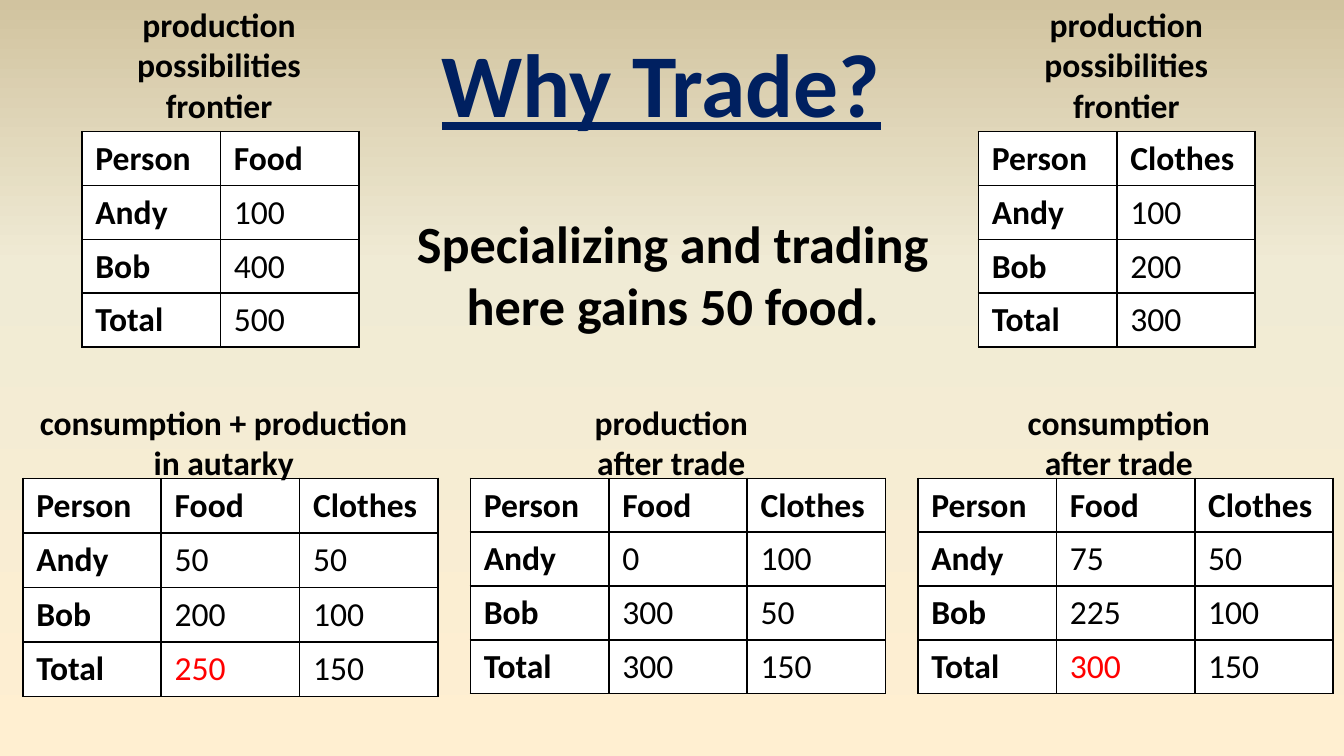
import copy

import pptx
import pptx.dml.color
import pptx.enum.text
import pptx.oxml
import pptx.oxml.ns
import pptx.util

Inches = pptx.util.Inches

HUES = {
    "ink": "000000",
    "navy": "002060",
    "red": "FF0000",
    "white": "FFFFFF",
    "sand": "FFEFD1",
    "cream": "F0EBD5",
    "tan": "D1C39F",
}
STOPS = [(0, "sand"), (0.65, "cream"), (1, "tan")]

BASE = {"name": "Calibri", "size": pptx.util.Pt(18), "bold": True}
PLAIN = {**BASE, "bold": False}
LARGE = {**BASE, "size": pptx.util.Pt(28)}
HEAD = {**BASE, "size": pptx.util.Pt(48), "underline": True}

WIDTH = Inches(10)
CELL = 1.03
ROW = 0.4
STEP = 3.33
NAMES = ["Person", "Andy", "Bob", "Total"]
FRONT = ["production", "possibilities", "frontier"]

TOP = [
    (0.61, 0.67, ["Food", "100", "400", "500"]),
    (7.28, 7.42, ["Clothes", "100", "200", "300"]),
]
LOW = [
    (["consumption + production", "in autarky"],
     ["Food", "50", "200", "250"], ["Clothes", "50", "100", "150"], True),
    (["production", "after trade"],
     ["Food", "0", "300", "300"], ["Clothes", "100", "50", "150"], False),
    (["consumption", "after trade"],
     ["Food", "75", "225", "300"], ["Clothes", "50", "100", "150"], True),
]


def get_hue(key):
    return pptx.dml.color.RGBColor.from_string(HUES[key])


def set_font(font, form, hue="ink"):
    for key, val in form.items():
        setattr(font, key, val)
    font.color.rgb = get_hue(hue)


def fill_frame(frame, lines, form, hue="ink"):
    frame.word_wrap = True
    for num, line in enumerate(lines):
        para = frame.paragraphs[0] if num == 0 else frame.add_paragraph()
        para.alignment = pptx.enum.text.PP_ALIGN.CENTER
        run = para.add_run()
        run.text = line
        set_font(run.font, form, hue)


def add_text(slide, spot, lines, form=BASE):
    box = slide.shapes.add_textbox(*map(Inches, spot))
    fill_frame(box.text_frame, lines, form)


def add_title(slide, spot, text):
    title = slide.shapes.title
    title.left, title.top, title.width, title.height = map(Inches, spot)
    fill_frame(title.text_frame, [text], HEAD, "navy")
    title.text_frame.word_wrap = False


def add_edges(cell):
    props = cell._tc.get_or_add_tcPr()
    for side in "LRTB":
        props.append(pptx.oxml.parse_xml(
            f'<a:ln{side} {pptx.oxml.ns.nsdecls("a")} w="12700"><a:solidFill>'
            f'<a:srgbClr val="{HUES["ink"]}"/></a:solidFill></a:ln{side}>'))


def add_grid(slide, left, top, cols, mark=False):
    cols = [NAMES, *cols]
    rows = len(NAMES)
    spot = (left, top, CELL * len(cols), ROW * rows)
    grid = slide.shapes.add_table(rows, len(cols), *map(Inches, spot)).table
    grid.first_row = grid.horz_banding = False
    for x, col in enumerate(cols):
        grid.columns[x].width = Inches(CELL)
        for y, text in enumerate(col):
            cell = grid.cell(y, x)
            add_edges(cell)
            cell.fill.solid()
            cell.fill.fore_color.rgb = get_hue("white")
            run = cell.text_frame.paragraphs[0].add_run()
            run.text = text
            hot = mark and x == 1 and y == rows - 1
            form = PLAIN if x and y else BASE
            set_font(run.font, form, "red" if hot else "ink")


def set_back(slide):
    fill = slide.background.fill
    fill.gradient()
    fill.gradient_angle = 90
    last = fill.gradient_stops[1]._gs
    last.addnext(copy.deepcopy(last))
    for stop, (place, hue) in zip(fill.gradient_stops, STOPS):
        stop.position = place
        stop.color.rgb = get_hue(hue)


def main():
    deck = pptx.Presentation()
    deck.slide_width, deck.slide_height = WIDTH, WIDTH * 9 // 16
    slide = deck.slides.add_slide(deck.slide_layouts[5])
    set_back(slide)
    add_title(slide, (3.17, 0.15, 3.5, 0.91), "Why Trade?")
    for num, (lines, food, wear, mark) in enumerate(LOW):
        add_grid(slide, 0.17 + num * STEP, 3.56, [food, wear], mark)
        add_text(slide, (0.08 + num * STEP, 2.94, 3.17, 0.71), lines)
    for left, edge, goods in TOP:
        add_grid(slide, left, 0.98, [goods])
        add_text(slide, (edge, -0.02, 1.92, 1.01), FRONT)
    add_text(slide, (2.92, 1.52, 4.17, 1.04),
             ["Specializing and trading", "here gains 50 food."], LARGE)
    deck.save("out.pptx")


if __name__ == "__main__":
    main()
